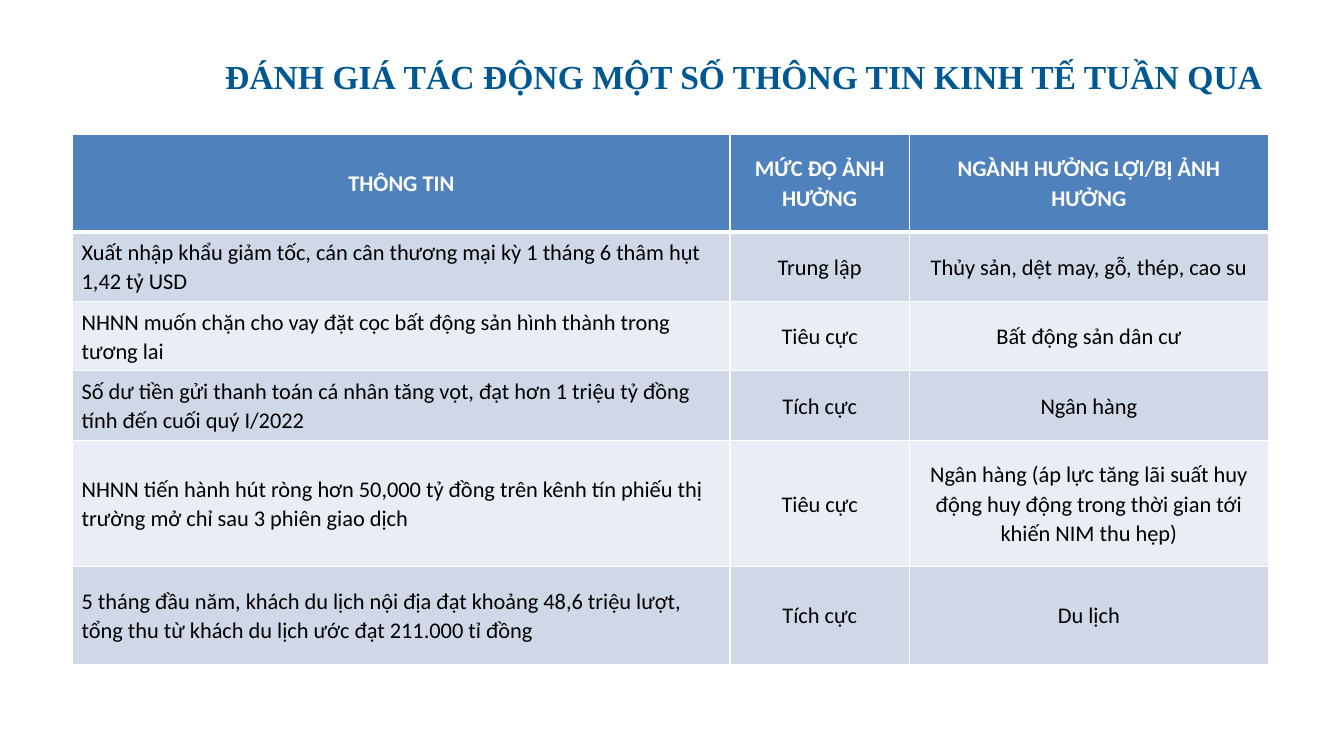
from dataclasses import dataclass

from lxml import etree
from pptx import Presentation
from pptx.dml.color import RGBColor
from pptx.enum.text import MSO_ANCHOR, MSO_AUTO_SIZE, PP_ALIGN
from pptx.oxml.ns import qn
from pptx.util import Inches, Pt

LEFT, CENTER = PP_ALIGN.LEFT, PP_ALIGN.CENTER
MIDDLE = MSO_ANCHOR.MIDDLE
FIT_SHAPE = MSO_AUTO_SIZE.SHAPE_TO_FIT_TEXT
TITLE_ONLY = 5


@dataclass(frozen=True)
class Theme:
    title_font: str = "Times New Roman"
    title_size: int = 24
    title_color: str = "005892"
    table_font: str = "Calibri"
    table_size: int = 16
    header_text: str = "FFFFFF"
    body_text: str = "000000"
    header_fill: str = "4F81BD"
    bands: tuple = ("D0D8E8", "E9EDF4")
    border: str = "FFFFFF"
    border_width: int = 1
    header_rule_width: int = 3


TITLE = "ĐÁNH GIÁ TÁC ĐỘNG MỘT SỐ THÔNG TIN KINH TẾ TUẦN QUA "
ROWS = [
    ("THÔNG TIN", "MỨC ĐỘ ẢNH HƯỞNG", "NGÀNH HƯỞNG LỢI/BỊ ẢNH HƯỞNG"),
    ("Xuất nhập khẩu giảm tốc, cán cân thương mại kỳ 1 tháng 6 thâm hụt 1,42 tỷ USD",
     "Trung lập", "Thủy sản, dệt may, gỗ, thép, cao su"),
    ("NHNN muốn chặn cho vay đặt cọc bất động sản hình thành trong tương lai",
     "Tiêu cực", "Bất động sản dân cư"),
    ("Số dư tiền gửi thanh toán cá nhân tăng vọt, đạt hơn 1 triệu tỷ đồng tính đến cuối quý I/2022",
     "Tích cực", "Ngân hàng"),
    ("NHNN tiến hành hút ròng hơn 50,000 tỷ đồng trên kênh tín phiếu thị trường mở chỉ sau 3 phiên giao dịch",
     "Tiêu cực",
     "Ngân hàng (áp lực tăng lãi suất huy động huy động trong thời gian tới khiến NIM thu hẹp)"),
    ("5 tháng đầu năm, khách du lịch nội địa đạt khoảng 48,6 triệu lượt, tổng thu từ khách du lịch ước đạt 211.000 tỉ đồng",
     "Tích cực", "Du lịch"),
]
COLUMN_WIDTHS = (6.52, 1.78, 3.56)
ROW_HEIGHTS = (0.97, 0.69, 0.69, 0.69, 1.25, 0.97)


class SlideBuilder:
    def __init__(self, slide, theme):
        self.slide = slide
        self.theme = theme

    def style_font(self, paragraph, name, size, color, bold):
        font = paragraph.font
        font.name, font.size, font.bold = name, Pt(size), bold
        font.color.rgb = RGBColor.from_string(color)

    def title(self, text, left, top, width, height):
        theme = self.theme
        box = self.slide.shapes.title
        box.left, box.top = Inches(left), Inches(top)
        box.width, box.height = Inches(width), Inches(height)
        frame = box.text_frame
        frame.text = text
        frame.word_wrap = True
        frame.auto_size = FIT_SHAPE
        frame.vertical_anchor = MIDDLE
        frame.margin_left = frame.margin_right = 0
        frame.margin_top = frame.margin_bottom = 0
        para = frame.paragraphs[0]
        para.alignment = CENTER
        self.style_font(para, theme.title_font, theme.title_size, theme.title_color, True)

    def borders(self, cell, top_width, bottom_width):
        side_width = self.theme.border_width
        widths = {"L": side_width, "R": side_width, "T": top_width, "B": bottom_width}
        properties = cell._tc.get_or_add_tcPr()
        for side, width in widths.items():
            line = etree.SubElement(properties, qn(f"a:ln{side}"), w=str(Pt(width)))
            fill = etree.SubElement(line, qn("a:solidFill"))
            etree.SubElement(fill, qn("a:srgbClr"), val=self.theme.border)

    def cell(self, cell, text, row, column):
        theme = self.theme
        is_header = row == 0
        thin, thick = theme.border_width, theme.header_rule_width
        self.borders(cell, thick if row == 1 else thin, thick if is_header else thin)
        fill = theme.header_fill if is_header else theme.bands[(row - 1) % 2]
        cell.fill.solid()
        cell.fill.fore_color.rgb = RGBColor.from_string(fill)
        cell.vertical_anchor = MIDDLE
        cell.margin_left = cell.margin_right = Inches(0.09)
        cell.margin_top = cell.margin_bottom = Inches(0.04)
        cell.text = text
        para = cell.text_frame.paragraphs[0]
        para.alignment = CENTER if is_header or column else LEFT
        para.line_spacing = 1.07
        para.space_after = Pt(8)
        color = theme.header_text if is_header else theme.body_text
        self.style_font(para, theme.table_font, theme.table_size, color, is_header)

    def table(self, rows, left, top, column_widths, row_heights):
        table = self.slide.shapes.add_table(
            len(rows), len(column_widths), Inches(left), Inches(top),
            Inches(sum(column_widths)), Inches(sum(row_heights))).table
        for column, width in zip(table.columns, column_widths):
            column.width = Inches(width)
        for row, height in zip(table.rows, row_heights):
            row.height = Inches(height)
        for row, texts in enumerate(rows):
            for column, text in enumerate(texts):
                self.cell(table.cell(row, column), text, row, column)


def main():
    deck = Presentation()
    deck.slide_width, deck.slide_height = Inches(13.33), Inches(7.5)
    page = SlideBuilder(deck.slides.add_slide(deck.slide_layouts[TITLE_ONLY]), Theme())
    page.title(TITLE, 2.2, 0.55, 10.42, 0.4)
    page.table(ROWS, 0.72, 1.33, COLUMN_WIDTHS, ROW_HEIGHTS)
    deck.save("out.pptx")


if __name__ == "__main__":
    main()
